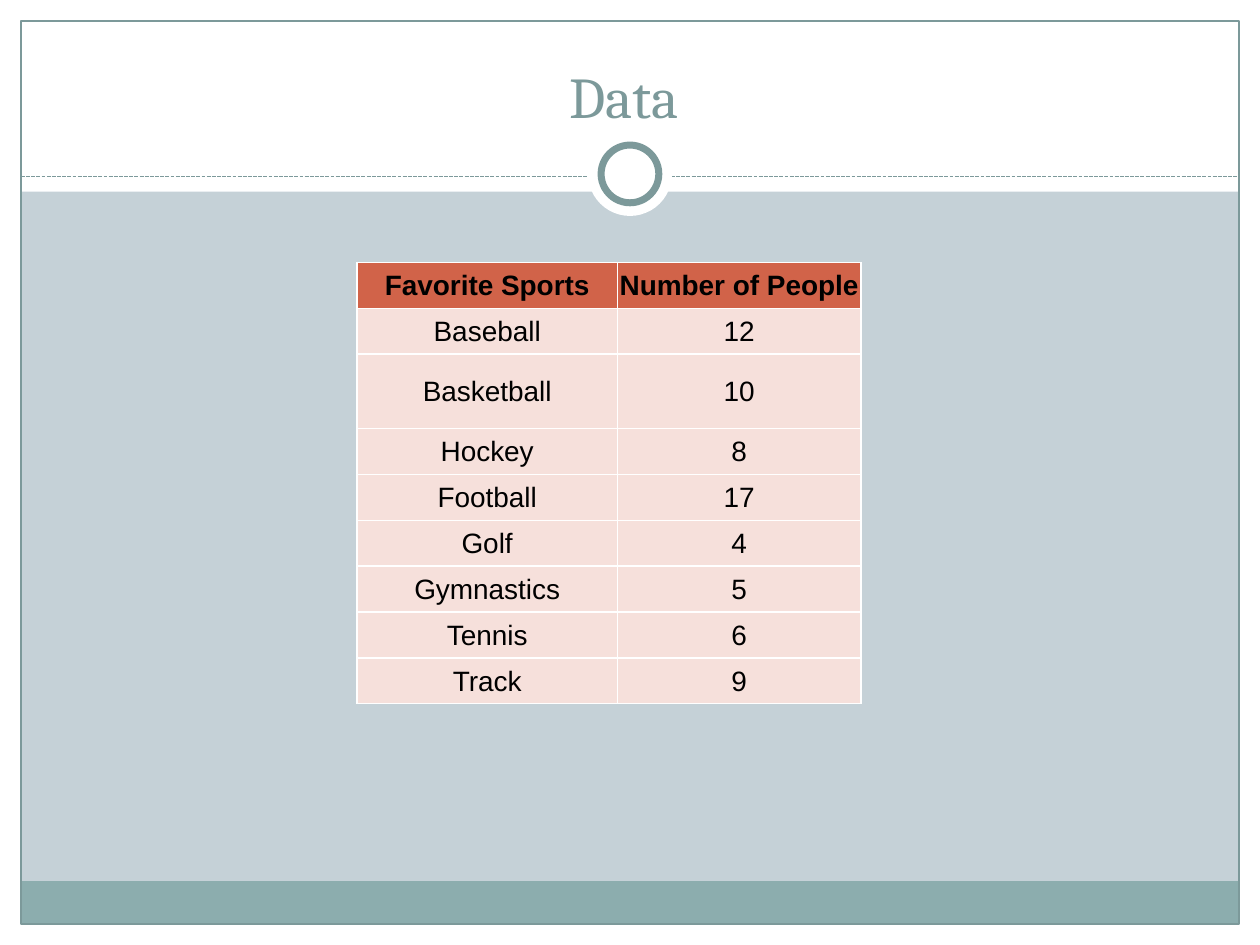
from lxml.etree import SubElement
from pptx import Presentation
from pptx.dml.color import RGBColor
from pptx.enum.dml import MSO_LINE
from pptx.enum.shapes import MSO_CONNECTOR, MSO_SHAPE
from pptx.enum.text import MSO_ANCHOR, PP_ALIGN
from pptx.oxml import parse_xml
from pptx.oxml.ns import nsdecls, qn
from pptx.util import Pt

WHITE = RGBColor(0xFF, 0xFF, 0xFF)
BLACK = RGBColor(0, 0, 0)
BACKDROP = RGBColor(0xC5, 0xD1, 0xD7)
TEAL = RGBColor(0x7C, 0x99, 0x9A)
FOOTER = RGBColor(0x8C, 0xAD, 0xAE)
HEADER_FILL = RGBColor(0xD1, 0x63, 0x49)
BODY_FILL = RGBColor(0xF6, 0xE0, 0xDB)

TITLE = "Data "
SPORTS = [
    ("Favorite Sports", "Number of People"),
    ("Baseball", "12"),
    ("Basketball", "10"),
    ("Hockey", "8"),
    ("Football", "17"),
    ("Golf", "4"),
    ("Gymnastics", "5"),
    ("Tennis", "6"),
    ("Track", "9"),
]
COLUMN_WIDTHS = (148.8, 139.2)
ROW_HEIGHT, TALL_ROW_HEIGHT, TALL_ROW = 26.2, 42.6, 2

WIDTH, HEIGHT, MARGIN = 720, 540, 12
BAND_HEIGHT, RULE_Y, FOOTER_HEIGHT = 109.5, 100.8, 24.5
RING_CENTER_Y, HALO_SIZE, RING_SIZE = 99.4, 48, 33
INNER_WIDTH, INNER_HEIGHT = WIDTH - 2 * MARGIN, HEIGHT - 2 * MARGIN


def add_panel(kind, left, top, width, height, fill=None, line_width=None):
    panel = slide.shapes.add_shape(kind, Pt(left), Pt(top), Pt(width), Pt(height))
    panel.shadow.inherit = False
    if fill is None:
        panel.fill.background()
    else:
        panel.fill.solid()
        panel.fill.fore_color.rgb = fill
    if line_width is None:
        panel.line.fill.background()
    else:
        panel.line.color.rgb = TEAL
        panel.line.width = Pt(line_width)


def add_circle(size, line_width=None):
    add_panel(MSO_SHAPE.OVAL, (WIDTH - size) / 2, RING_CENTER_Y - size / 2,
              size, size, WHITE, line_width)


def write(frame, text, font_name, size, color, bold=False):
    paragraph = frame.paragraphs[0]
    paragraph.alignment = PP_ALIGN.CENTER
    run = paragraph.add_run()
    run.text = text
    run.font.name = font_name
    run.font.size = Pt(size)
    run.font.bold = bold
    run.font.color.rgb = color


def add_borders(cell):
    properties = cell._tc.get_or_add_tcPr()
    for position, side in enumerate(("lnL", "lnR", "lnT", "lnB")):
        properties.insert(position, parse_xml(
            f'<a:{side} {nsdecls("a")} w="{Pt(1)}"><a:solidFill>'
            f'<a:srgbClr val="{WHITE}"/></a:solidFill></a:{side}>'))


deck = Presentation()
deck.slide_width, deck.slide_height = Pt(WIDTH), Pt(HEIGHT)
slide = deck.slides.add_slide(deck.slide_layouts[5])
slide.background.fill.solid()
slide.background.fill.fore_color.rgb = BACKDROP

for box in [
    (0, HEIGHT - MARGIN, WIDTH, MARGIN, WHITE),
    (0, 0, WIDTH, BAND_HEIGHT, WHITE),
    (0, 0, MARGIN, HEIGHT, WHITE),
    (WIDTH - MARGIN, 0, MARGIN, HEIGHT, WHITE),
    (MARGIN, HEIGHT - MARGIN - FOOTER_HEIGHT, INNER_WIDTH, FOOTER_HEIGHT, FOOTER),
    (MARGIN, MARGIN, INNER_WIDTH, INNER_HEIGHT, None, 0.75),
]:
    add_panel(MSO_SHAPE.RECTANGLE, *box)

rule = slide.shapes.add_connector(
    MSO_CONNECTOR.STRAIGHT, Pt(MARGIN), Pt(RULE_Y), Pt(WIDTH - MARGIN), Pt(RULE_Y))
rule.line.color.rgb = TEAL
rule.line.width = Pt(0.75)
rule.line.dash_style = MSO_LINE.SQUARE_DOT
SubElement(rule._element.spPr, qn("a:effectLst"))

add_circle(HALO_SIZE)
add_circle(RING_SIZE, 4)

title = slide.shapes.title
slide.shapes._spTree.append(title._element)
title.left, title.top, title.width, title.height = Pt(24), Pt(18), Pt(672), Pt(60)
title.text_frame.vertical_anchor = MSO_ANCHOR.BOTTOM
write(title.text_frame, TITLE, "Cambria", 33, TEAL)

row_heights = [TALL_ROW_HEIGHT if row == TALL_ROW else ROW_HEIGHT
               for row in range(len(SPORTS))]
table = slide.shapes.add_table(
    len(SPORTS), len(COLUMN_WIDTHS), Pt(204), Pt(150),
    Pt(sum(COLUMN_WIDTHS)), Pt(sum(row_heights))).table
for column, width in zip(table.columns, COLUMN_WIDTHS):
    column.width = Pt(width)
for row, (height, entries) in enumerate(zip(row_heights, SPORTS)):
    table.rows[row].height = Pt(height)
    is_header = row == 0
    for column, entry in enumerate(entries):
        cell = table.cell(row, column)
        cell.margin_left = cell.margin_right = cell.margin_top = Pt(0.75)
        cell.margin_bottom = 0
        cell.vertical_anchor = MSO_ANCHOR.MIDDLE
        cell.fill.solid()
        cell.fill.fore_color.rgb = HEADER_FILL if is_header else BODY_FILL
        add_borders(cell)
        write(cell.text_frame, entry, "Arial", 16, BLACK, is_header)

deck.save("out.pptx")
